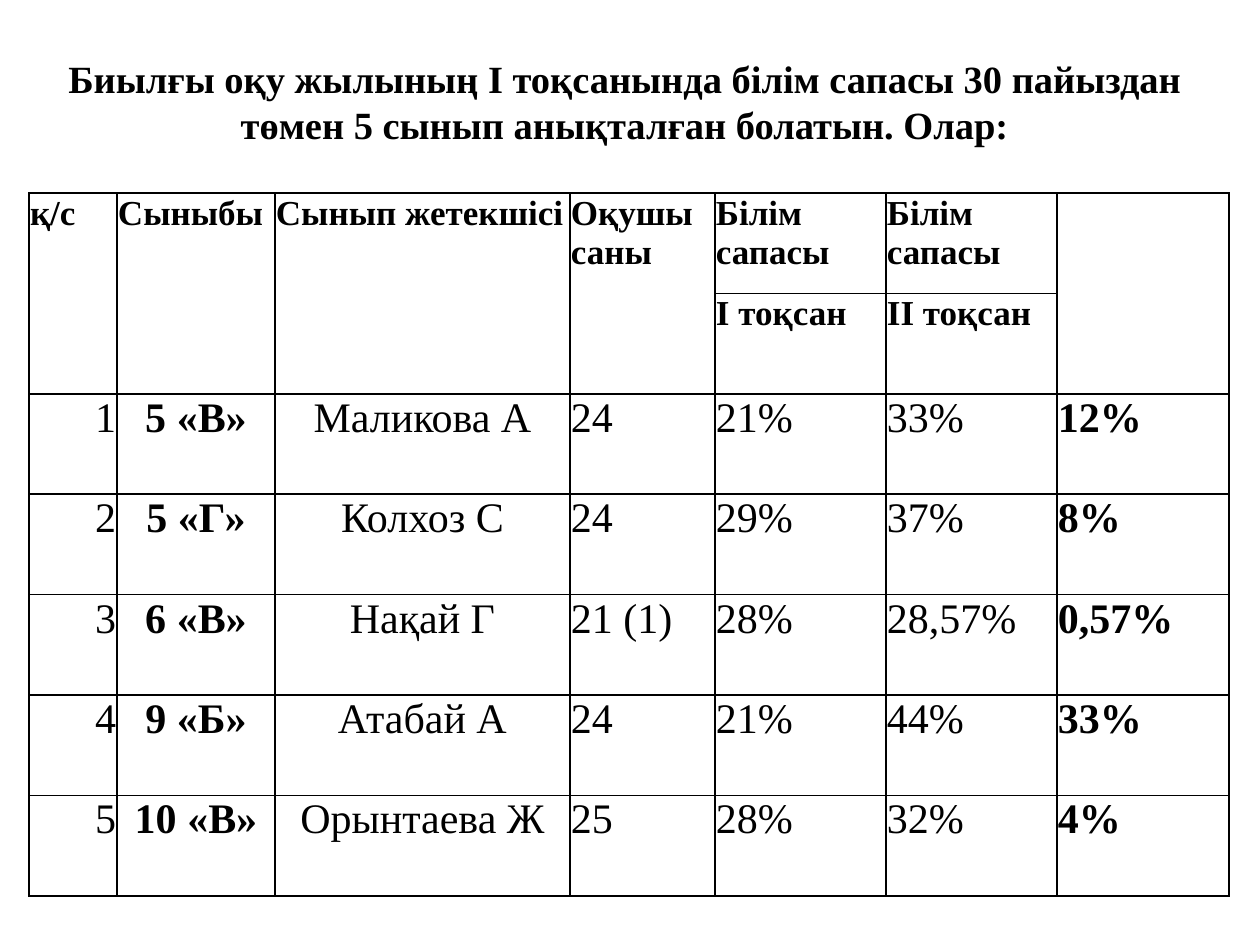
from lxml import etree
from pptx import Presentation
from pptx import util as u
from pptx.dml.color import RGBColor
from pptx.enum import text
from pptx.oxml.ns import qn

TITLE = ("Биылғы оқу жылының І тоқсанында білім сапасы 30 пайыздан "
         "төмен 5 сынып анықталған болатын. Олар:")
HEADER = [
    ("қ/с", "Сыныбы", "Сынып жетекшісі", "Оқушы саны", "Білім сапасы", "Білім сапасы", ""),
    ("", "", "", "", "І тоқсан", "ІІ тоқсан", ""),
]
CLASSES = [
    ("1", "5 «В»", "Маликова А", "24", "21%", "33%", "12%"),
    ("2", "5 «Г»", "Колхоз С", "24", "29%", "37%", "8%"),
    ("3", "6 «В»", "Нақай Г", "21 (1)", "28%", "28,57%", "0,57%"),
    ("4", "9 «Б»", "Атабай А", "24", "21%", "44%", "33%"),
    ("5", "10 «В»", "Орынтаева Ж", "25", "28%", "32%", "4%"),
]
ROWS = HEADER + CLASSES
COLUMN_WIDTHS = [88, 158, 295, 145, 171, 171, 172]
TABLE_LEFT, TABLE_TOP, TABLE_HEIGHT = 29, 193, 703
TITLE_BOX = (29, 0, 1191, 203)
MERGED_COLUMNS = (0, 1, 2, 3, 6)
BOLD_COLUMNS = (1, 6)
LEFT, CENTER, RIGHT = text.PP_ALIGN.LEFT, text.PP_ALIGN.CENTER, text.PP_ALIGN.RIGHT
BODY_ALIGNMENTS = [RIGHT, CENTER, CENTER, LEFT, LEFT, LEFT, LEFT]
COLORS = {"ink": "000000", "paper": "FFFFFF"}
FONT = "Times New Roman"


def px(length):
    return u.Emu(round(length * 914400 / 126))


def format_paragraph(paragraph, size, bold, alignment):
    paragraph.alignment = alignment
    font = paragraph.font
    font.name, font.size, font.bold = FONT, u.Pt(size), bold
    font.color.rgb = RGBColor.from_string(COLORS["ink"])


def add_borders(cell):
    properties = cell._tc.get_or_add_tcPr()
    for side in ("lnL", "lnR", "lnT", "lnB"):
        line = etree.SubElement(properties, qn(f"a:{side}"), w=str(u.Pt(1)))
        fill = etree.SubElement(line, qn("a:solidFill"))
        etree.SubElement(fill, qn("a:srgbClr"), val=COLORS["ink"])


def add_title(slide):
    title = slide.shapes.title
    title.left, title.top, title.width, title.height = map(px, TITLE_BOX)
    frame = title.text_frame
    frame.text = TITLE
    frame.word_wrap = True
    frame.vertical_anchor = text.MSO_ANCHOR.MIDDLE
    format_paragraph(frame.paragraphs[0], 22, True, CENTER)


def add_class_table(slide):
    table = slide.shapes.add_table(
        len(ROWS), len(COLUMN_WIDTHS), px(TABLE_LEFT), px(TABLE_TOP),
        px(sum(COLUMN_WIDTHS)), px(TABLE_HEIGHT)).table
    table.first_row = table.horz_banding = False
    for column, width in zip(table.columns, COLUMN_WIDTHS):
        column.width = px(width)

    for row_index, row in enumerate(ROWS):
        is_header = row_index < len(HEADER)
        for column_index, value in enumerate(row):
            cell = table.cell(row_index, column_index)
            cell.margin_left = cell.margin_right = cell.margin_top = px(1)
            cell.margin_bottom = 0
            add_borders(cell)
            cell.fill.solid()
            cell.fill.fore_color.rgb = RGBColor.from_string(COLORS["paper"])
            cell.text = value
            format_paragraph(
                cell.text_frame.paragraphs[0],
                20 if is_header else 24,
                is_header or column_index in BOLD_COLUMNS,
                LEFT if is_header else BODY_ALIGNMENTS[column_index])

    for column_index in MERGED_COLUMNS:
        table.cell(0, column_index).merge(table.cell(1, column_index))


def main():
    presentation = Presentation()
    presentation.slide_width, presentation.slide_height = px(1260), px(945)
    slide = presentation.slides.add_slide(presentation.slide_layouts[5])
    add_title(slide)
    add_class_table(slide)
    presentation.save("out.pptx")


if __name__ == "__main__":
    main()
